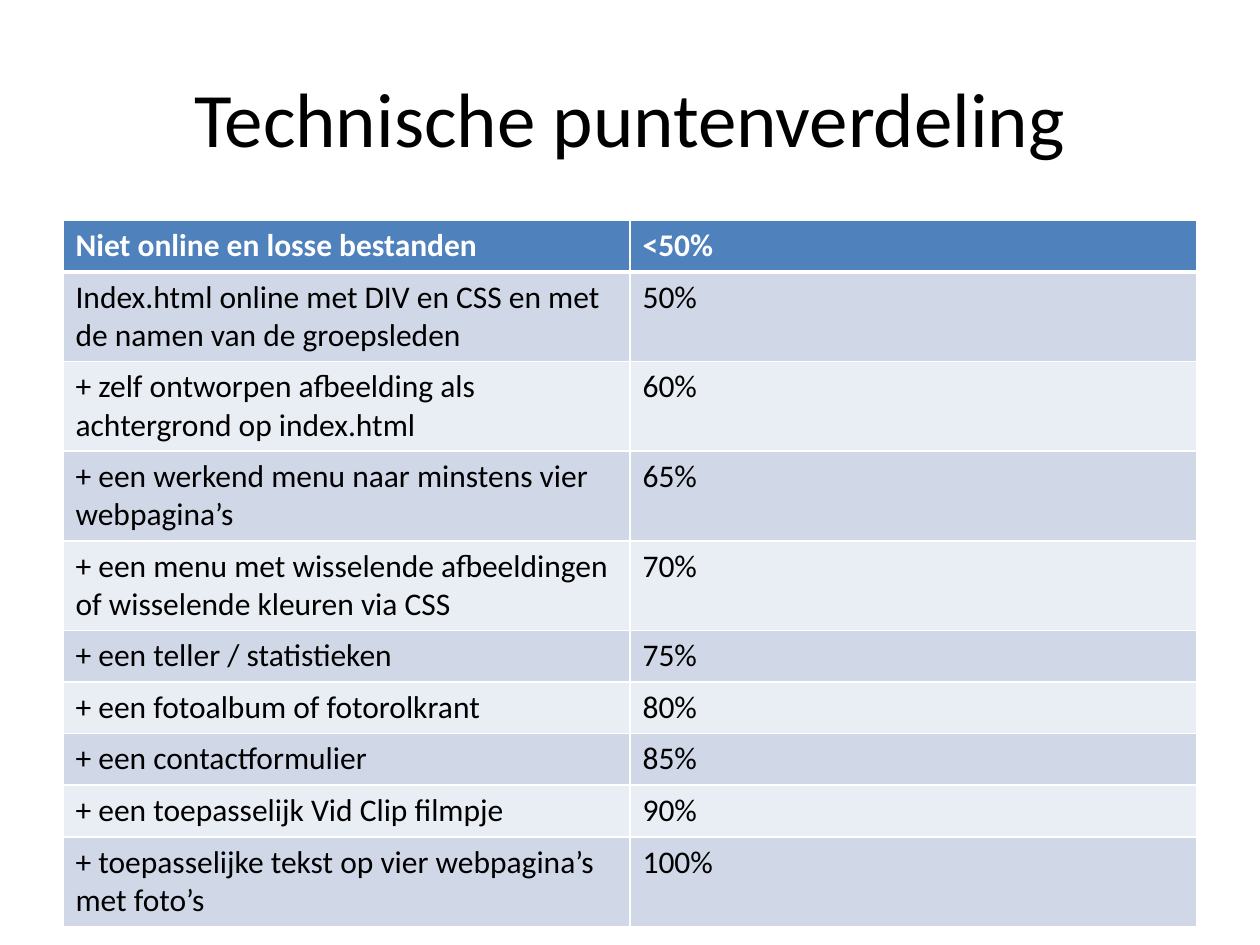
from dataclasses import dataclass

from lxml import etree
from pptx import Presentation
from pptx.dml.color import RGBColor
from pptx.enum.text import MSO_ANCHOR, PP_ALIGN
from pptx.oxml.ns import qn
from pptx.util import Inches, Pt

CENTER = PP_ALIGN.CENTER
MIDDLE = MSO_ANCHOR.MIDDLE
TITLE_ONLY = 5


@dataclass(frozen=True)
class Theme:
    font: str = "Calibri"
    title_size: int = 44
    table_size: int = 18
    text: str = "000000"
    header_text: str = "FFFFFF"
    header_fill: str = "4F81BD"
    bands: tuple = ("D0D8E8", "E9EDF4")
    border: str = "FFFFFF"
    border_width: int = 1
    header_rule_width: int = 3


THEME = Theme()

TITLE = "Technische puntenverdeling"
SCORES = [
    ("Niet online en losse bestanden", "<50%"),
    ("Index.html online met DIV en CSS en met de namen van de groepsleden", "50%"),
    ("+ zelf ontworpen afbeelding als achtergrond op index.html", "60%"),
    ("+ een werkend menu naar minstens vier webpagina’s", "65%"),
    ("+ een menu met wisselende afbeeldingen of wisselende kleuren via CSS", "70%"),
    ("+ een teller / statistieken", "75%"),
    ("+ een fotoalbum of fotorolkrant", "80%"),
    ("+ een contactformulier", "85%"),
    ("+ een toepasselijk Vid Clip filmpje", "90%"),
    ("+ toepasselijke tekst op vier webpagina’s met foto’s", "100%"),
]


def set_font(para, size, color, bold=False):
    para.font.name = THEME.font
    para.font.size = Pt(size)
    para.font.bold = bold
    para.font.color.rgb = RGBColor.from_string(color)


def set_borders(cell, top, bottom):
    """Draw the four cell borders; must run before the fill is set."""
    properties = cell._tc.get_or_add_tcPr()
    widths = {"a:lnL": THEME.border_width, "a:lnR": THEME.border_width,
              "a:lnT": top, "a:lnB": bottom}
    for tag, width in widths.items():
        line = etree.SubElement(properties, qn(tag), w=str(Pt(width)))
        fill = etree.SubElement(line, qn("a:solidFill"))
        etree.SubElement(fill, qn("a:srgbClr"), val=THEME.border)


def place_title(page, left, top, width, height):
    title = page.shapes.title
    title.left, title.top, title.width, title.height = left, top, width, height
    frame = title.text_frame
    frame.text = TITLE
    frame.vertical_anchor = MIDDLE
    para = frame.paragraphs[0]
    para.alignment = CENTER
    set_font(para, THEME.title_size, THEME.text)


def place_scores(page, left, top, width, row_height):
    table = page.shapes.add_table(
        len(SCORES), len(SCORES[0]), left, top, width, row_height * len(SCORES)
    ).table
    for row_index, row in enumerate(SCORES):
        is_header = row_index == 0
        fill = THEME.header_fill if is_header else THEME.bands[(row_index - 1) % 2]
        color = THEME.header_text if is_header else THEME.text
        # The heavy rule is shared by the header and the first body row
        above = THEME.header_rule_width if row_index == 1 else THEME.border_width
        below = THEME.header_rule_width if is_header else THEME.border_width
        for column_index, text in enumerate(row):
            cell = table.cell(row_index, column_index)
            set_borders(cell, above, below)
            cell.fill.solid()
            cell.fill.fore_color.rgb = RGBColor.from_string(fill)
            cell.text = text
            set_font(cell.text_frame.paragraphs[0], THEME.table_size, color, is_header)


def main():
    deck = Presentation()
    deck.slide_width, deck.slide_height = Inches(10), Inches(7.5)
    page = deck.slides.add_slide(deck.slide_layouts[TITLE_ONLY])
    place_title(page, Inches(0.5), Inches(0.3), Inches(9), Inches(1.25))
    place_scores(page, Inches(0.5), Inches(1.75), Inches(9), Inches(0.41))
    deck.save("out.pptx")


if __name__ == "__main__":
    main()
